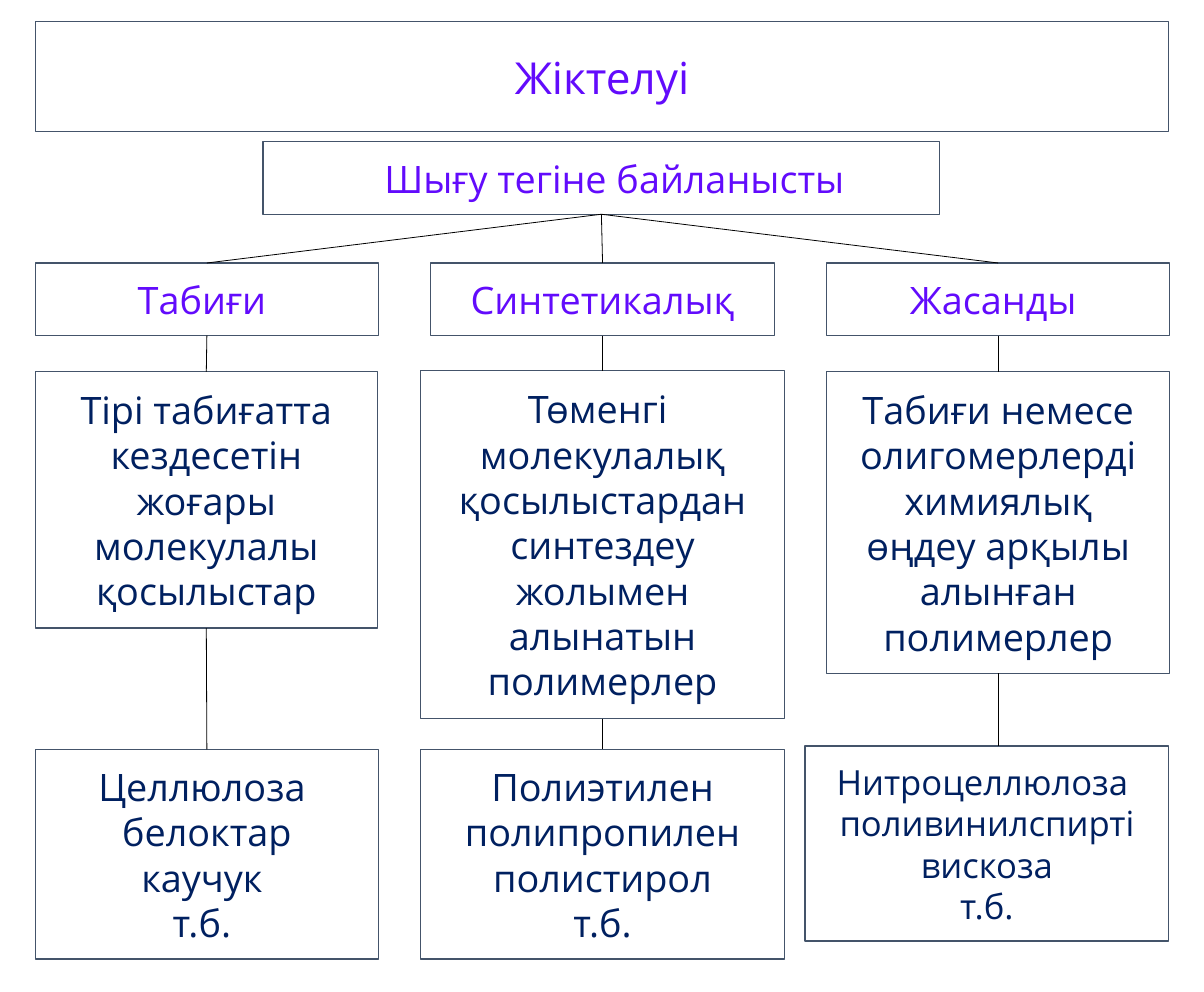
import pptx
import pptx.util
import pptx.dml.color
import pptx.enum.shapes
import pptx.enum.text
import pptx.oxml.ns
import lxml.etree

Inches = pptx.util.Inches
Pt = pptx.util.Pt
ALIGN = pptx.enum.text.PP_ALIGN
COLORS = {"heading": "620BFC", "body": "002060", "border": "44546A", "link": "000000"}
FONT = "Open Sans"
TOP, BOTTOM = 0, 2


def fill_box(box, place, text, size, color, align=ALIGN.CENTER):
    box.left, box.top, box.width, box.height = [Inches(value) for value in place]
    box.fill.background()
    box.line.color.rgb = pptx.dml.color.RGBColor.from_string(COLORS["border"])
    box.line.width = Pt(0.75)
    frame = box.text_frame
    frame.text = text
    frame.word_wrap = True
    frame.auto_size = pptx.enum.text.MSO_AUTO_SIZE.SHAPE_TO_FIT_TEXT
    frame.vertical_anchor = pptx.enum.text.MSO_ANCHOR.MIDDLE
    frame.margin_left = frame.margin_right = Inches(0.28)
    frame.margin_top = frame.margin_bottom = Inches(0.12)
    for para in frame.paragraphs:
        para.alignment = align
        for span in para.runs:
            span.font.name = FONT
            span.font.size = Pt(size)
            span.font.color.rgb = pptx.dml.color.RGBColor.from_string(COLORS[color])


def add_box(page, *details):
    box = page.shapes.add_shape(pptx.enum.shapes.MSO_SHAPE.RECTANGLE, 0, 0, 0, 0)
    box.shadow.inherit = False
    fill_box(box, *details)
    return box


deck = pptx.Presentation()
deck.slide_width = Inches(10.62)
deck.slide_height = Inches(8.75)
page = deck.slides.add_slide(deck.slide_layouts[5])

# Title and the basis of the classification
fill_box(page.shapes.title, (0.31, 0.32, 10, 0.71), "Жіктелуі", 28, "heading")
basis = add_box(page, (2.32, 1.25, 5.97, 0.64), "Шығу тегіне байланысты",
                24, "heading", ALIGN.JUSTIFY)
basis.text_frame.paragraphs[0]._p.get_or_add_pPr().set("indent", str(Inches(0.79)))

# Columns: kind, definition and examples, each with its place
columns = [
    [("Табиғи ", (0.31, 2.32, 3.03, 0.64), 24),
     ("Тірі табиғатта кездесетін жоғары молекулалы қосылыстар",
      (0.31, 3.28, 3.02, 2.26), 24),
     ("Целлюлоза \nбелоктар\nкаучук \nт.б. ", (0.31, 6.61, 3.03, 1.85), 24)],
    [("Синтетикалық", (3.8, 2.32, 3.03, 0.64), 24),
     ("Төменгі  молекулалық қосылыстардан синтездеу жолымен алынатын полимерлер",
      (3.71, 3.27, 3.21, 3.07), 24),
     ("Полиэтилен\nполипропилен\nполистирол\nт.б.", (3.71, 6.61, 3.21, 1.85), 24)],
    [("Жасанды ", (7.29, 2.32, 3.03, 0.64), 24),
     ("Табиғи немесе олигомерлерді химиялық өңдеу арқылы алынған полимерлер",
      (7.29, 3.28, 3.03, 2.66), 24),
     ("Нитроцеллюлоза \nполивинилспирті\nвискоза\nт.б.", (7.1, 6.58, 3.21, 1.72), 22)],
]
links = []
for column in columns:
    chain = [basis]
    for row, (text, place, size) in enumerate(column):
        chain.append(add_box(page, place, text, size, "body" if row else "heading"))
    links += zip(chain, chain[1:])

# Links from each box down to the next
for upper, lower in links:
    middle = upper.left + upper.width // 2
    link = page.shapes.add_connector(
        pptx.enum.shapes.MSO_CONNECTOR.STRAIGHT,
        middle, upper.top + upper.height, middle, lower.top)
    link.begin_connect(upper, BOTTOM)
    # The offset examples box on the right is met by a vertical line
    offset = abs(lower.left + lower.width // 2 - middle)
    if upper is basis or offset < Inches(0.05):
        link.end_connect(lower, TOP)
    link.line.color.rgb = pptx.dml.color.RGBColor.from_string(COLORS["link"])
    link.line.width = Pt(0.5)
    lxml.etree.SubElement(link._element.spPr, pptx.oxml.ns.qn("a:effectLst"))

deck.save("out.pptx")
